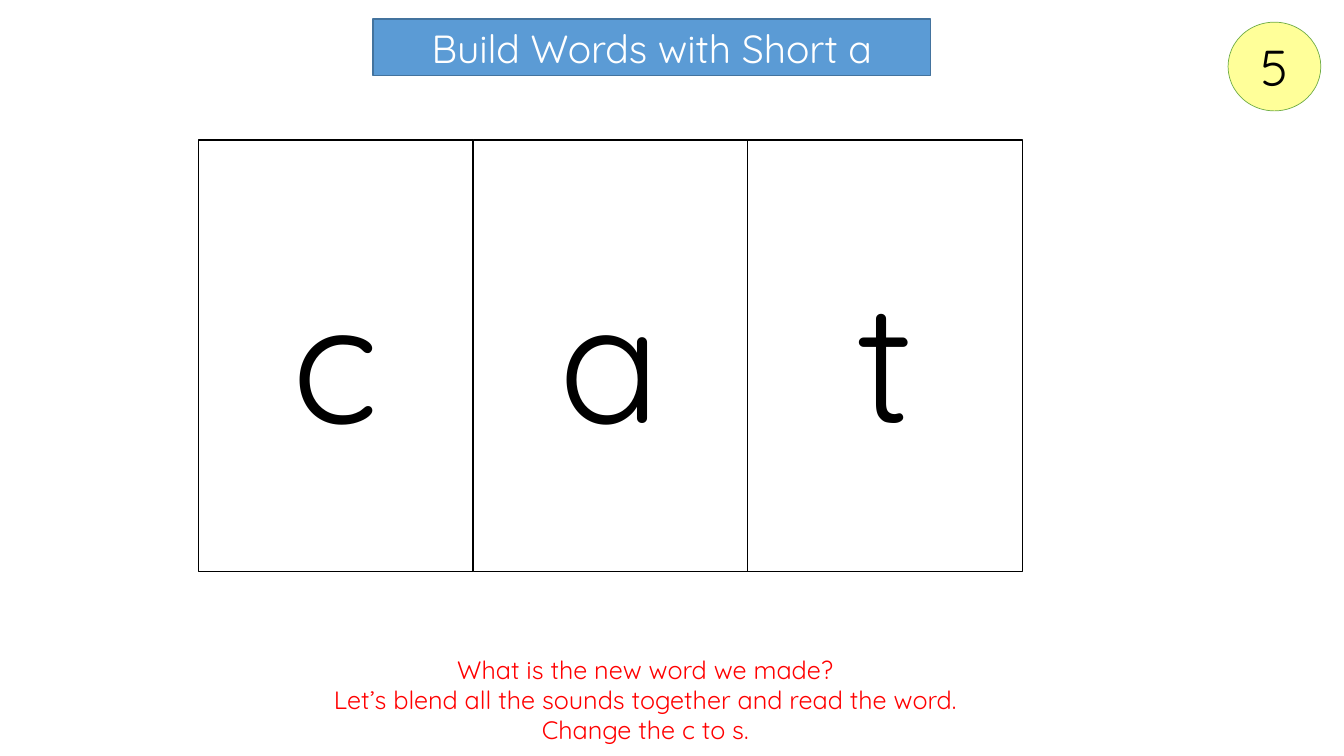
from pptx import Presentation
from pptx.dml.color import RGBColor
from pptx.enum.shapes import MSO_SHAPE as SHAPE
from pptx.enum.text import MSO_ANCHOR as ANCHOR, MSO_AUTO_SIZE as AUTO, PP_ALIGN as ALIGN
from pptx.util import Inches, Pt

FONT = "Quicksand"
BLACK = RGBColor(0x00, 0x00, 0x00)
WHITE = RGBColor(0xFF, 0xFF, 0xFF)
RED = RGBColor(0xFF, 0x00, 0x00)
BLUE = RGBColor(0x5B, 0x9B, 0xD5)
DARK_BLUE = RGBColor(0x43, 0x73, 0x9E)
YELLOW = RGBColor(0xFF, 0xFF, 0x99)
GREEN = RGBColor(0x70, 0xAD, 0x47)


def box_of(left, top, width, height):
    return [Inches(v) for v in (left, top, width, height)]


def paint(sp, fill, line, weight):
    sp.fill.solid()
    sp.fill.fore_color.rgb = fill
    sp.line.color.rgb = line
    sp.line.width = Pt(weight)


def write(sp, text, size, color, anchor=ANCHOR.MIDDLE):
    tf = sp.text_frame
    tf.text = text
    tf.word_wrap = True
    tf.auto_size = AUTO.NONE
    tf.vertical_anchor = anchor
    for p in tf.paragraphs:
        p.alignment = ALIGN.CENTER
        p.font.name = FONT
        p.font.size = Pt(size)
        p.font.color.rgb = color


def add_panel(slide, kind, box, fill, line, weight):
    sp = slide.shapes.add_shape(kind, *box)
    sp.shadow.inherit = False
    paint(sp, fill, line, weight)
    return sp


def add_title(slide, box, text):
    title = slide.shapes.title
    title.left, title.top, title.width, title.height = box
    paint(title, BLUE, DARK_BLUE, 1)
    write(title, text, 28, WHITE)


def add_letters(slide, box, word):
    """One equal column for each letter of the word."""
    left, top, width, height = box
    column = width // len(word)
    for i, letter in enumerate(word):
        cell = (left + i * column, top, column, height)
        write(add_panel(slide, SHAPE.RECTANGLE, cell, WHITE, BLACK, 1), letter, 120, BLACK)


def add_prompt(slide, box, lines):
    write(slide.shapes.add_textbox(*box), "\n".join(lines), 18, RED, ANCHOR.TOP)


def add_number(slide, box, number):
    write(add_panel(slide, SHAPE.OVAL, box, YELLOW, GREEN, 0.5), number, 36, BLACK)


def main():
    prs = Presentation()
    prs.slide_width, prs.slide_height = Inches(13.33), Inches(7.5)
    slide = prs.slides.add_slide(prs.slide_layouts.get_by_name("Title Only"))

    # Heading and slide number badge
    add_title(slide, box_of(3.7, 0.19, 5.53, 0.56), "Build Words with Short a")
    add_number(slide, box_of(12.18, 0.22, 0.92, 0.88), "5")

    # Letter cards
    add_letters(slide, box_of(1.97, 1.39, 8.17, 4.28), "cat")

    # Teacher's prompt
    add_prompt(slide, box_of(1.06, 6.44, 10.68, 1.01), [
        "What is the new word we made?",
        "Let’s blend all the sounds together and read the word.",
        "Change the c to s.",
    ])
    prs.save("out.pptx")


if __name__ == "__main__":
    main()
